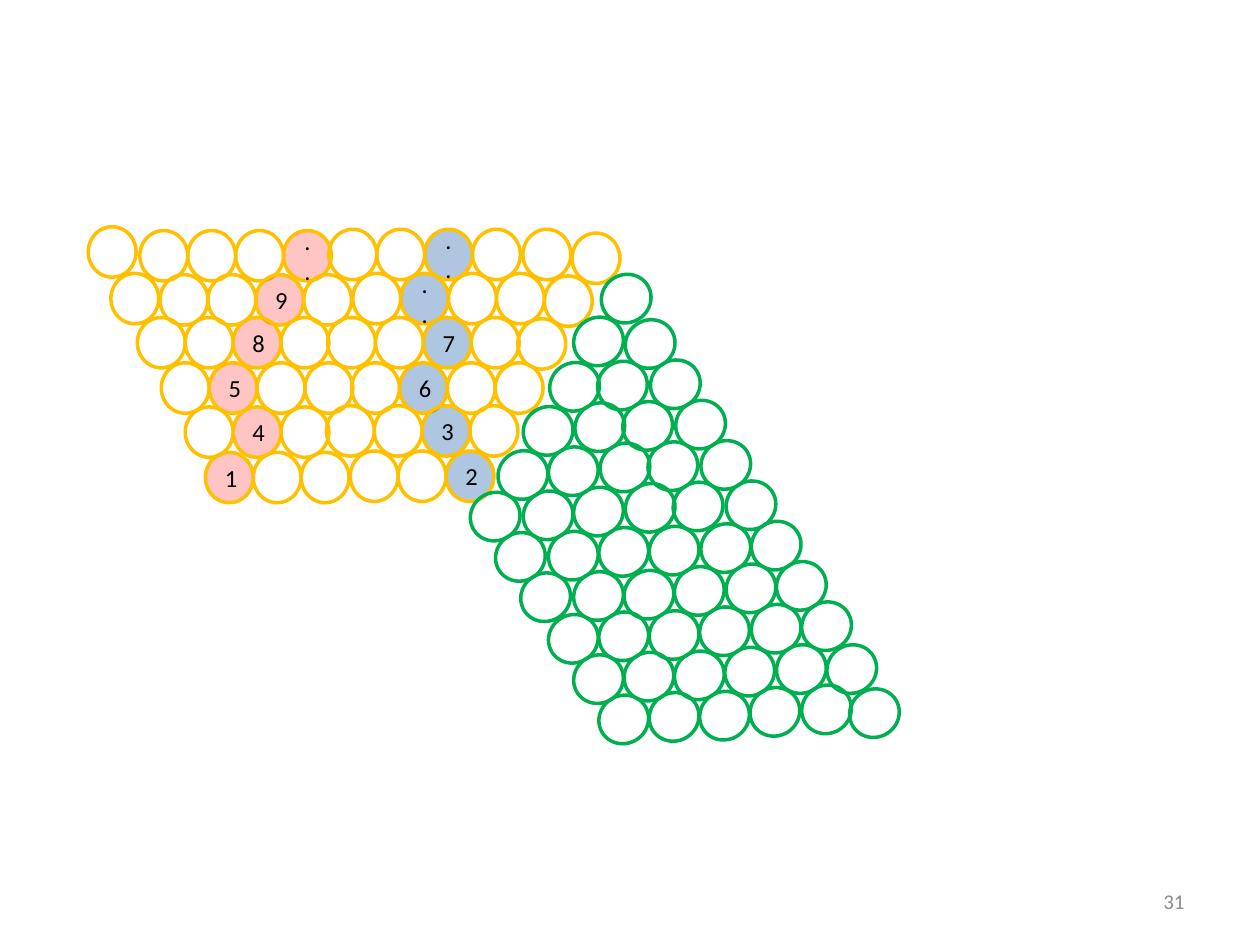
from dataclasses import dataclass
from typing import Optional

import pptx
import pptx.dml.color
import pptx.enum.shapes
import pptx.enum.text
import pptx.oxml
import pptx.oxml.ns
import pptx.util

EMU_PER_PX = 9144  # 100 px to the inch


@dataclass(frozen=True)
class Theme:
    font: str = "Calibri"
    label_size: int = 14
    number_size: int = 12
    line_width: int = 2
    ink: str = "000000"
    grey: str = "8C8C8C"
    amber: str = "FFC000"
    green: str = "00B050"


@dataclass(frozen=True)
class Tint:
    color: str
    opacity: int  # percent


@dataclass(frozen=True)
class Mark:
    index: int
    text: str
    tint: Tint


@dataclass(frozen=True)
class Strip:
    """A run of evenly spaced circles, one of which may be marked."""
    left: int
    top: int
    count: int
    mark: Optional[Mark] = None


@dataclass(frozen=True)
class Lattice:
    color: str
    width: int
    height: int
    dx: int
    dy: int
    rotation: float
    strips: tuple[Strip, ...]


THEME = Theme()
RED = Tint("FF0000", 23)
BLUE = Tint("4F81BD", 45)

ROWS = Lattice(THEME.amber, 38, 40, 38, 0, 0, (
    Strip(70, 180, 1),
    Strip(111, 183, 4, Mark(3, "..", RED)),
    Strip(261, 182, 4, Mark(2, "..", BLUE)),
    Strip(415, 182, 1),
    Strip(454, 185, 1),
    Strip(88, 217, 1),
    Strip(127, 218, 4, Mark(2, "9", RED)),
    Strip(280, 217, 4, Mark(1, "..", BLUE)),
    Strip(432, 219, 1),
    Strip(109, 252, 4, Mark(2, "8", RED)),
    Strip(260, 252, 4, Mark(2, "7", BLUE)),
    Strip(411, 253, 1),
    Strip(128, 288, 4, Mark(1, "5", RED)),
    Strip(279, 288, 4, Mark(1, "6", BLUE)),
    Strip(147, 323, 3, Mark(1, "4", RED)),
    Strip(259, 322, 4, Mark(2, "3", BLUE)),
    Strip(163, 359, 3, Mark(0, "1", RED)),
    Strip(278, 358, 3, Mark(2, "2", BLUE)),
))

DIAGONALS = Lattice(THEME.green, 38, 40, 20, 32, 58.3, (
    Strip(374, 390, 3), Strip(436, 487, 3),
    Strip(396, 357, 7),
    Strip(416, 322, 4), Strip(496, 452, 4),
    Strip(437, 287, 4), Strip(516, 417, 5),
    Strip(456, 251, 1), Strip(475, 286, 4), Strip(557, 415, 5),
    Strip(478, 217, 1), Strip(497, 253, 4), Strip(577, 381, 4),
    Strip(657, 511, 1), Strip(675, 546, 1),
))


def px(n: int) -> pptx.util.Emu:
    return pptx.util.Emu(n * EMU_PER_PX)


def rgb(color: str) -> pptx.dml.color.RGBColor:
    return pptx.dml.color.RGBColor.from_string(color)


def write(sp, text: str, size: int, color: str, align) -> None:
    tf = sp.text_frame
    tf.word_wrap = True
    tf.vertical_anchor = pptx.enum.text.MSO_ANCHOR.MIDDLE
    p = tf.paragraphs[0]
    p.alignment = align
    r = p.add_run()
    r.text = text
    r.font.name = THEME.font
    r.font.size = pptx.util.Pt(size)
    r.font.color.rgb = rgb(color)


def apply_tint(sp, tint: Tint) -> None:
    sp.fill.solid()
    sp.fill.fore_color.rgb = rgb(tint.color)
    qn = pptx.oxml.ns.qn
    clr = sp._element.spPr.find(qn("a:solidFill")).find(qn("a:srgbClr"))
    alpha = f'<a:alpha {pptx.oxml.ns.nsdecls("a")} val="{tint.opacity * 1000}"/>'
    clr.append(pptx.oxml.parse_xml(alpha))


def draw_circle(shapes, lattice: Lattice, left: int, top: int,
                mark: Optional[Mark]) -> None:
    sp = shapes.add_shape(pptx.enum.shapes.MSO_SHAPE.OVAL, px(left), px(top),
                          px(lattice.width), px(lattice.height))
    sp.shadow.inherit = False
    sp.rotation = lattice.rotation
    sp.line.color.rgb = rgb(lattice.color)
    sp.line.width = pptx.util.Pt(THEME.line_width)
    if mark is None:
        sp.fill.background()
    else:
        apply_tint(sp, mark.tint)
        write(sp, mark.text, THEME.label_size, THEME.ink,
              pptx.enum.text.PP_ALIGN.CENTER)


def draw_lattice(s, lattice: Lattice) -> None:
    """Draw all strips of the lattice as one group."""
    group = s.shapes.add_group_shape()
    for strip in lattice.strips:
        for i in range(strip.count):
            mark = strip.mark if strip.mark and strip.mark.index == i else None
            draw_circle(group.shapes, lattice, strip.left + i * lattice.dx,
                        strip.top + i * lattice.dy, mark)


def main() -> None:
    prs = pptx.Presentation()
    prs.slide_width, prs.slide_height = px(1000), px(750)
    s = prs.slides.add_slide(prs.slide_layouts[6])
    number = s.shapes.add_textbox(px(717), px(695), px(233), px(40))
    write(number, "31", THEME.number_size, THEME.grey,
          pptx.enum.text.PP_ALIGN.RIGHT)
    for lattice in (ROWS, DIAGONALS):
        draw_lattice(s, lattice)
    prs.save("out.pptx")


if __name__ == "__main__":
    main()
